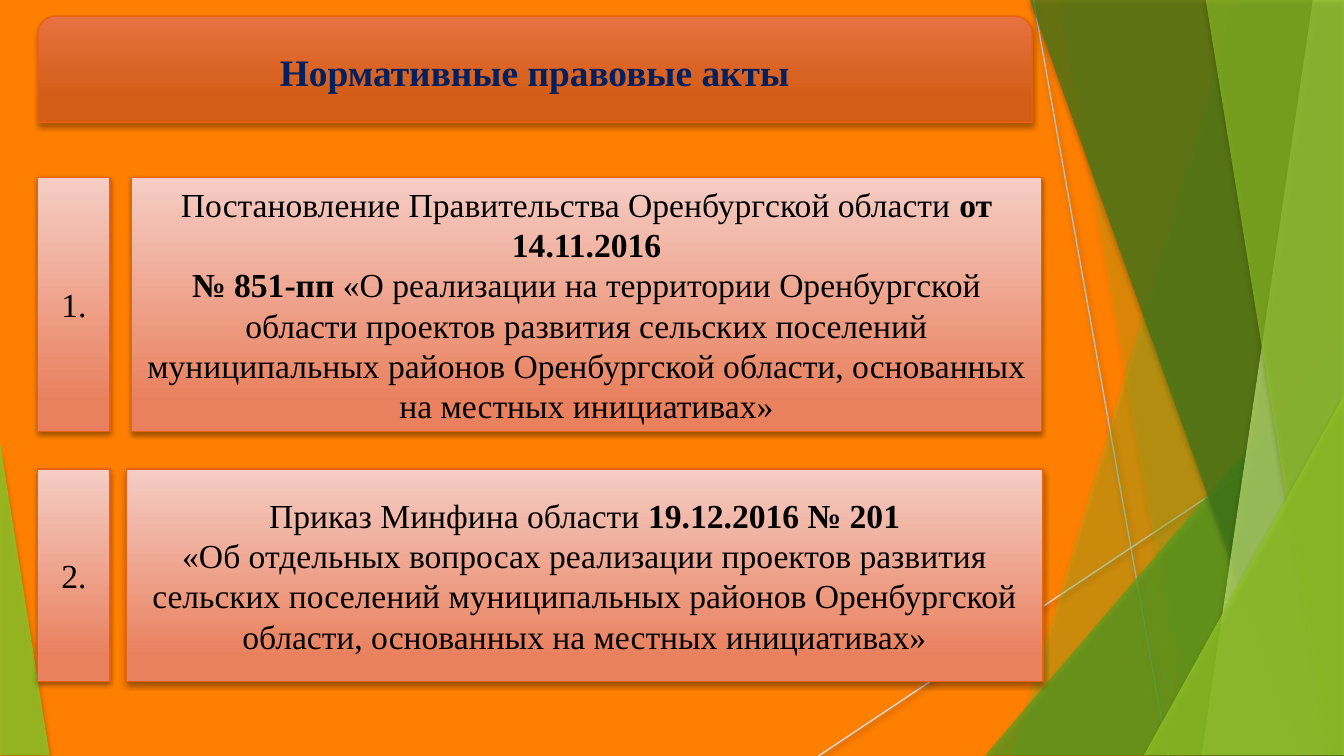
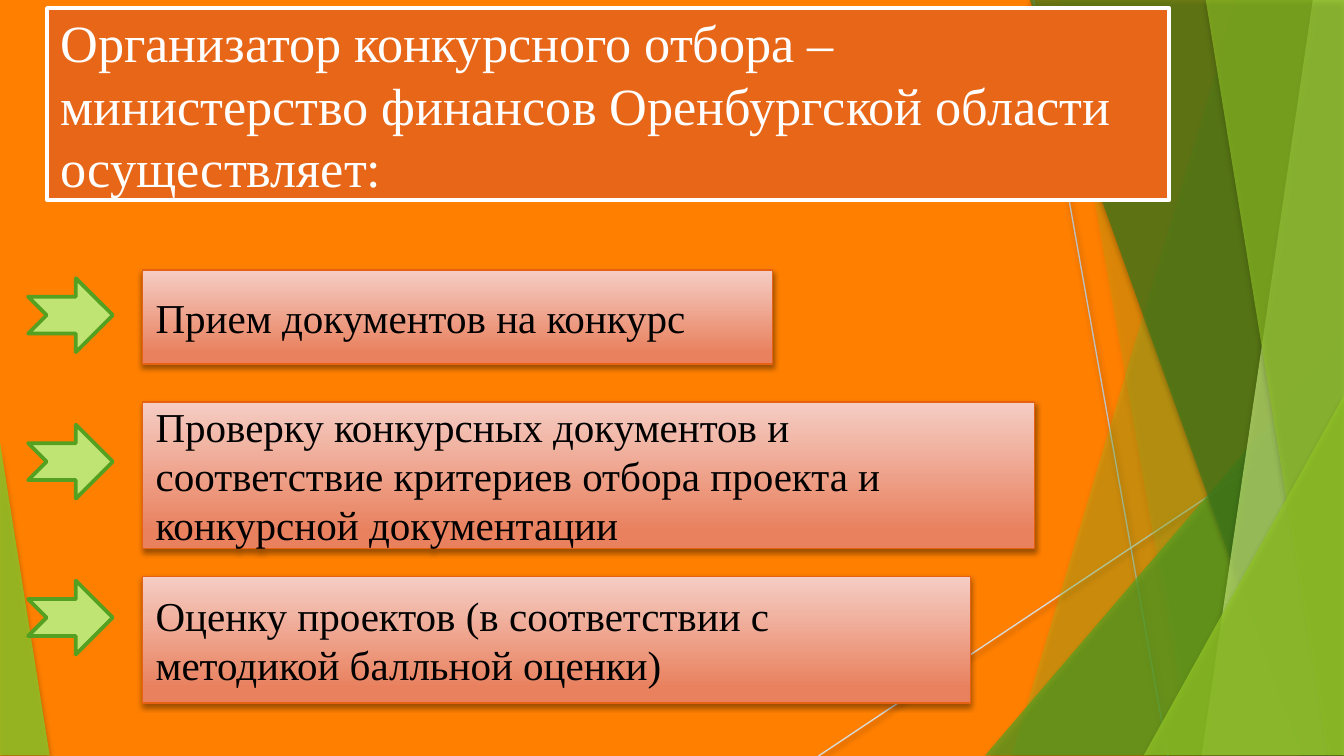
import pptx
import pptx.util
import pptx.dml.color
import pptx.enum.shapes
import pptx.enum.text
import pptx.oxml
import pptx.oxml.ns

Inches, Pt = pptx.util.Inches, pptx.util.Pt
SHAPE = pptx.enum.shapes.MSO_SHAPE
ALIGN = pptx.enum.text.PP_ALIGN
NS = pptx.oxml.ns.nsdecls("a")

COLORS = {
    "background": "FF8000", "lime": "90C226", "green": "54A021",
    "forest": "3F7819", "pale_lime": "C0E474", "gray": "BFBFBF",
    "light_gray": "D9D9D9", "border": "E66212", "band": "E76618",
    "band_dark": "D35D16", "band_light": "E87141", "box_dark": "E9815F",
    "box_light": "F5CDC4", "navy": "002060", "black": "000000",
    "white": "FFFFFF",
}
FONT = "Times New Roman"
W = 10
H = W * 9 / 16
TOP, BOTTOM = -0.01, 5.62
BAND_SHADOW, BOX_SHADOW = (35, 3, 2), (38, 3.1, 1.6)
BAND_GRADIENT = (22, "band_dark", "band_light")
BOX_GRADIENT = (12, "box_dark", "box_light")

RAYS = [((7.69, 0), (8.69, H), "gray"), ((W, 3.02), (6.09, H), "light_gray")]
FACETS = [
    ("strip", 9.21, 7.53, "lime", 30),
    ("strip", 7.88, 8.87, "lime", 20),
    ("corner", (7.33, 2.5, 2.67, 3.12), 1, "green", 72),
    ("strip", 7.66, 9.68, "forest", 70),
    ("strip", 9.77, 8.94, "pale_lime", 70),
    ("strip", 8.97, 9.88, "lime", 65),
    ("corner", (8.51, 2.94, 1.49, 2.68), 1, "lime", 80),
    ("corner", (0, 3.29, 0.37, 2.33), 0, "lime", 85),
]

ACTS_TITLE = "Нормативные правовые акты"
ACTS = [
    (1.32, 1.89, 0.98, 6.77, [
        [("Постановление Правительства Оренбургской области ", False),
         ("от 14.11.2016", True)],
        [("№ 851-пп ", True),
         ("«О реализации на территории Оренбургской области проектов развития "
          "сельских поселений муниципальных районов Оренбургской области, "
          "основанных на местных инициативах»", False)]]),
    (3.49, 1.58, 0.94, 6.82, [
        [("Приказ Минфина области ", False), ("19.12.2016 № 201", True)],
        [("«Об отдельных вопросах реализации проектов развития сельских "
          "поселений муниципальных районов Оренбургской области, основанных "
          "на местных инициативах»", False)]]),
]
DUTIES_TITLE = ("Организатор конкурсного отбора – \vминистерство финансов "
                "Оренбургской области осуществляет:")
DUTIES = [
    (2.01, 0.7, 4.69, 2.07, "Прием документов на конкурс"),
    (2.99, 1.09, 6.64, 3.16, "Проверку конкурсных документов и соответствие "
                             "критериев отбора проекта и конкурсной документации"),
    (4.29, 0.94, 6.16, 4.32, "Оценку проектов (в соответствии с методикой "
                             "балльной оценки)"),
]


def rgb(name):
    return pptx.dml.color.RGBColor.from_string(COLORS[name])


def set_fill(sp, color, alpha=None):
    sp.fill.solid()
    sp.fill.fore_color.rgb = rgb(color)
    if alpha is not None:
        clr = sp.element.spPr.find(".//" + pptx.oxml.ns.qn("a:srgbClr"))
        clr.append(pptx.oxml.parse_xml(f'<a:alpha {NS} val="{alpha * 1000}"/>'))


def set_gradient(sp, gradient):
    position, dark, light = gradient
    sp.fill.gradient()
    sp.fill.gradient_angle = 90
    first, last = sp.fill.gradient_stops
    first.position, first.color.rgb = position / 100, rgb(dark)
    last.position, last.color.rgb = 1, rgb(light)


def set_line(sp, color, width):
    sp.line.color.rgb = rgb(color)
    sp.line.width = Pt(width)


def set_shadow(sp, shadow=None):
    effect = ""
    if shadow:
        alpha, blur, dist = shadow
        effect = (f'<a:outerShdw blurRad="{Pt(blur)}" dist="{Pt(dist)}" '
                  f'dir="5400000" rotWithShape="0"><a:srgbClr val="{COLORS["black"]}">'
                  f'<a:alpha val="{alpha * 1000}"/></a:srgbClr></a:outerShdw>')
    sp.element.spPr.append(
        pptx.oxml.parse_xml(f"<a:effectLst {NS}>{effect}</a:effectLst>"))


def set_text(sp, paragraphs, size, color, align, bold=None):
    tf = sp.text_frame
    tf.word_wrap = True
    tf.auto_size = pptx.enum.text.MSO_AUTO_SIZE.NONE
    tf.vertical_anchor = pptx.enum.text.MSO_ANCHOR.MIDDLE
    for i, content in enumerate(paragraphs):
        p = tf.add_paragraph() if i else tf.paragraphs[0]
        p.alignment = align
        p.font.name, p.font.size, p.font.bold = FONT, Pt(size), bold
        p.font.color.rgb = rgb(color)
        if isinstance(content, str):
            p.text = content
            continue
        for text, strong in content:
            r = p.add_run()
            r.text, r.font.bold = text, strong


def add_shape(s, kind, box):
    return s.shapes.add_shape(kind, *map(Inches, box))


def add_panel(s, kind, box, gradient, shadow):
    sp = add_shape(s, kind, box)
    set_gradient(sp, gradient)
    set_line(sp, "border", 0.75)
    set_shadow(sp, shadow)
    return sp


def add_box(s, box, paragraphs, size, align):
    sp = add_panel(s, SHAPE.RECTANGLE, box, BOX_GRADIENT, BOX_SHADOW)
    set_text(sp, paragraphs, size, "black", align)


def add_strip(s, top_x, bottom_x):
    corners = [(W, TOP), (W, BOTTOM), (bottom_x, BOTTOM)]
    builder = s.shapes.build_freeform(Inches(top_x), Inches(TOP))
    builder.add_line_segments([tuple(map(Inches, c)) for c in corners], close=True)
    return builder.convert_to_shape()


def decorate(layout, s):
    layout.background.fill.solid()
    layout.background.fill.fore_color.rgb = rgb("background")
    parts = []
    for start, end, color in RAYS:
        ray = s.shapes.add_connector(pptx.enum.shapes.MSO_CONNECTOR.STRAIGHT,
                                     *map(Inches, start + end))
        set_line(ray, color, 0.75)
        set_shadow(ray, BOX_SHADOW)
        parts.append(ray)
    for kind, place, edge, color, alpha in FACETS:
        if kind == "strip":
            sp = add_strip(s, place, edge)
        else:
            sp = add_shape(s, SHAPE.ISOSCELES_TRIANGLE, place)
            sp.adjustments[0] = edge
        set_fill(sp, color, alpha)
        sp.line.fill.background()
        set_shadow(sp, BAND_SHADOW)
        parts.append(sp)
    for number, sp in enumerate(parts, 100):
        sp.element.xpath(".//p:cNvPr")[0].set("id", str(number))
        layout.shapes.element.append(sp.element)


def build_acts(s):
    s.shapes.element.remove(s.shapes.title.element)
    band = add_panel(s, SHAPE.ROUND_2_SAME_RECTANGLE, (0.28, 0.12, 7.4, 0.79),
                     BAND_GRADIENT, BAND_SHADOW)
    set_text(band, [ACTS_TITLE], 20, "navy", ALIGN.CENTER, True)
    for number, (top, height, left, width, paragraphs) in enumerate(ACTS, 1):
        add_box(s, (0.28, top, 0.54, height), [f"{number}."], 18, ALIGN.CENTER)
        add_box(s, (left, top, width, height), paragraphs, 18, ALIGN.CENTER)


def build_duties(s):
    title = s.shapes.title
    title.left, title.top, title.width, title.height = map(
        Inches, (0.35, 0.06, 8.35, 1.43))
    set_fill(title, "band")
    set_line(title, "white", 2)
    set_text(title, [DUTIES_TITLE], 28, "white", ALIGN.LEFT)
    for top, height, width, _, text in DUTIES:
        add_box(s, (1.06, top, width, height), [text], 22, ALIGN.LEFT)
    for _, _, _, arrow_top, _ in DUTIES:
        arrow = add_shape(s, SHAPE.NOTCHED_RIGHT_ARROW, (0.21, arrow_top, 0.63, 0.55))
        set_fill(arrow, "pale_lime")
        set_line(arrow, "green", 2)
        set_shadow(arrow)


def main():
    prs = pptx.Presentation()
    prs.slide_width, prs.slide_height = Inches(W), Inches(H)
    layout = prs.slide_layouts[5]
    acts, duties = (prs.slides.add_slide(layout) for _ in range(2))
    decorate(layout, acts)
    build_acts(acts)
    build_duties(duties)
    prs.save("out.pptx")


if __name__ == "__main__":
    main()
